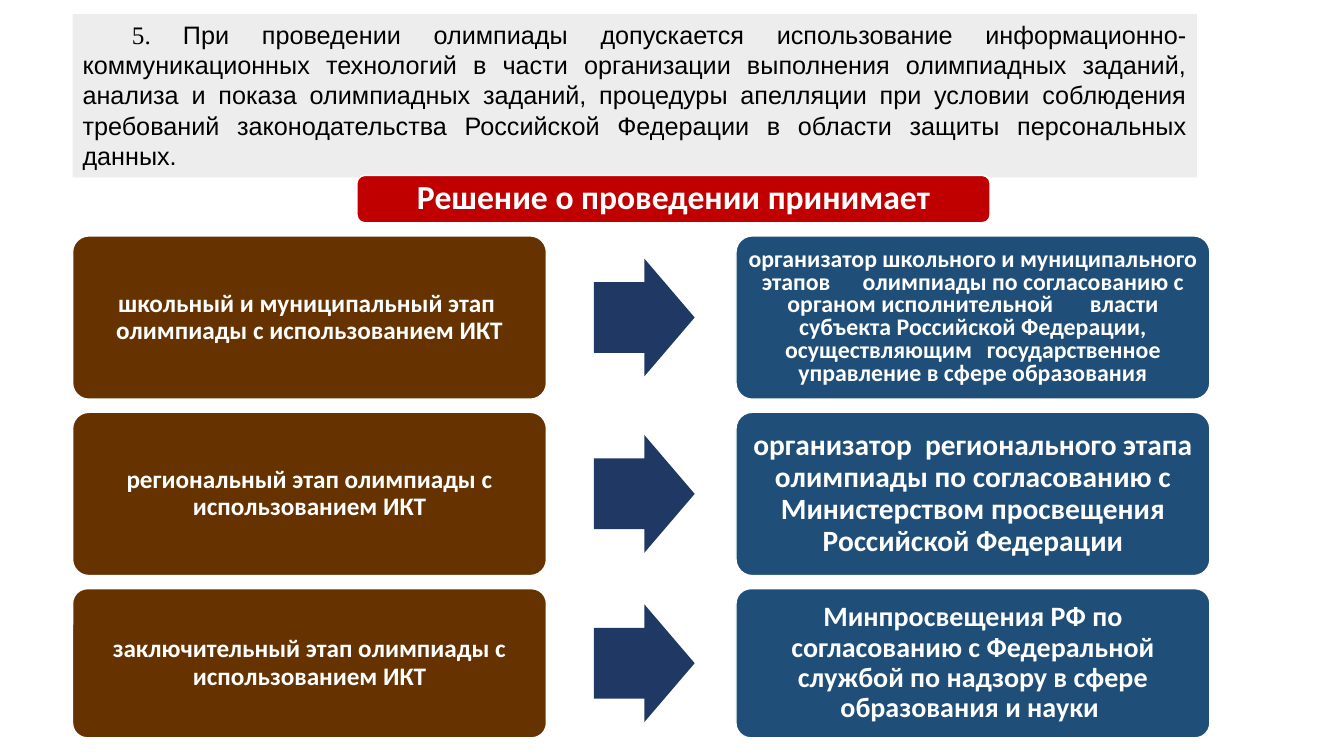
import pptx
import pptx.util
import pptx.dml.color
import pptx.enum.shapes
import pptx.enum.text

Inches, Pt = pptx.util.Inches, pptx.util.Pt
SHAPE = pptx.enum.shapes.MSO_SHAPE
ALIGN = pptx.enum.text.PP_ALIGN
ANCHOR = pptx.enum.text.MSO_ANCHOR

COLORS = {
    "white": "FFFFFF",
    "black": "000000",
    "panel": "EDEDED",
    "banner": "C00000",
    "stage": "663300",
    "arrow": "203864",
    "organizer": "1F4E79",
}

# Stage text, organizer text, its size, line spacing and inset, row height
ROWS = [
    ("школьный и муниципальный этап  олимпиады с использованием ИКТ",
     "организатор школьного и муниципального этапов \tолимпиады по согласованию с "
     "органом исполнительной \tвласти субъекта Российской Федерации, "
     "осуществляющим \tгосударственное управление в сфере образования",
     17, 0.8, 0.07, 1.62),
    ("региональный этап олимпиады с использованием ИКТ",
     "организатор  регионального этапа олимпиады по согласованию с "
     "Министерством просвещения Российской Федерации",
     21, 0.9, 0.09, 1.62),
    ("заключительный этап олимпиады с использованием ИКТ",
     "Минпросвещения РФ по согласованию с Федеральной службой по надзору "
     "в сфере образования и науки ",
     20, 0.9, 0.08, 1.48),
]
ROW_TOP, ROW_PITCH = 2.34, 1.75


def rgb(name):
    return pptx.dml.color.RGBColor.from_string(COLORS[name])


def add_box(s, kind, x, y, w, h, fill, outline=False):
    sp = s.shapes.add_shape(kind, Inches(x), Inches(y), Inches(w), Inches(h))
    sp.shadow.inherit = False
    sp.fill.solid()
    sp.fill.fore_color.rgb = rgb(fill)
    if outline:
        sp.line.color.rgb = rgb("white")
        sp.line.width = Pt(1)
    else:
        sp.line.fill.background()
    return sp


def add_run(p, text, size, font, color, bold=False):
    r = p.add_run()
    r.text = text
    r.font.size = Pt(size)
    r.font.name = font
    r.font.bold = bold
    r.font.color.rgb = rgb(color)


def add_label(sp, text, size, spacing=0.9, inset=0.07):
    tf = sp.text_frame
    tf.word_wrap = True
    tf.vertical_anchor = ANCHOR.MIDDLE
    tf.margin_left = tf.margin_right = Inches(inset)
    tf.margin_top = tf.margin_bottom = Inches(inset)
    p = tf.paragraphs[0]
    p.alignment = ALIGN.CENTER
    p.line_spacing = spacing
    add_run(p, text, size, "Calibri", "white", bold=True)


def add_intro(s, x, y, w, h):
    sp = add_box(s, SHAPE.RECTANGLE, x, y, w, h, "panel")
    tf = sp.text_frame
    tf.word_wrap = True
    tf.vertical_anchor = ANCHOR.TOP
    p = tf.paragraphs[0]
    p.alignment = ALIGN.JUSTIFY
    p.space_after = Pt(10)
    p._p.get_or_add_pPr().set("indent", str(Inches(0.49)))
    add_run(p, "5. ", 18, "Times New Roman", "black")
    add_run(p, "При проведении олимпиады допускается использование "
               "информационно-коммуникационных технологий в части организации "
               "выполнения олимпиадных заданий, анализа и показа олимпиадных "
               "заданий, процедуры апелляции при условии соблюдения требований "
               "законодательства Российской Федерации в области защиты "
               "персональных данных. ", 18, "Arial", "black")


def add_banner(s, x, y, w, h):
    sp = add_box(s, SHAPE.ROUNDED_RECTANGLE, x, y, w, h, "banner", outline=True)
    add_label(sp, "Решение о проведении принимает", 24, inset=0.1)


def add_row(s, x, y, w, h, stage, organizer, size, spacing, inset):
    card_w, arrow_w, arrow_h = 4.7, 1, 1.17
    # Stage and organizer cards at the two ends
    stage_card, organizer_card = [
        add_box(s, SHAPE.ROUNDED_RECTANGLE, left, y, card_w, h, fill, outline=True)
        for left, fill in ((x, "stage"), (x + w - card_w, "organizer"))]
    for card in (stage_card, organizer_card):
        card.adjustments[0] = 0.1
    add_label(stage_card, stage, 18)
    add_label(organizer_card, organizer, size, spacing, inset)
    # Arrow between the cards
    arrow = add_box(s, SHAPE.RIGHT_ARROW, x + 5.17, y + (h - arrow_h) / 2,
                    arrow_w, arrow_h, "arrow")
    arrow.adjustments[0] = 0.6
    arrow.adjustments[1] = 0.5


def main():
    prs = pptx.Presentation()
    prs.slide_width, prs.slide_height = Inches(13.33), Inches(7.5)
    s = prs.slides.add_slide(prs.slide_layouts[6])
    add_intro(s, 0.72, 0.14, 11.15, 1.62)
    add_banner(s, 3.54, 1.74, 6.28, 0.47)
    for i, (stage, organizer, size, spacing, inset, h) in enumerate(ROWS):
        add_row(s, 0.72, ROW_TOP + i * ROW_PITCH, 11.28, h,
                stage, organizer, size, spacing, inset)
    prs.save("out.pptx")


if __name__ == "__main__":
    main()
